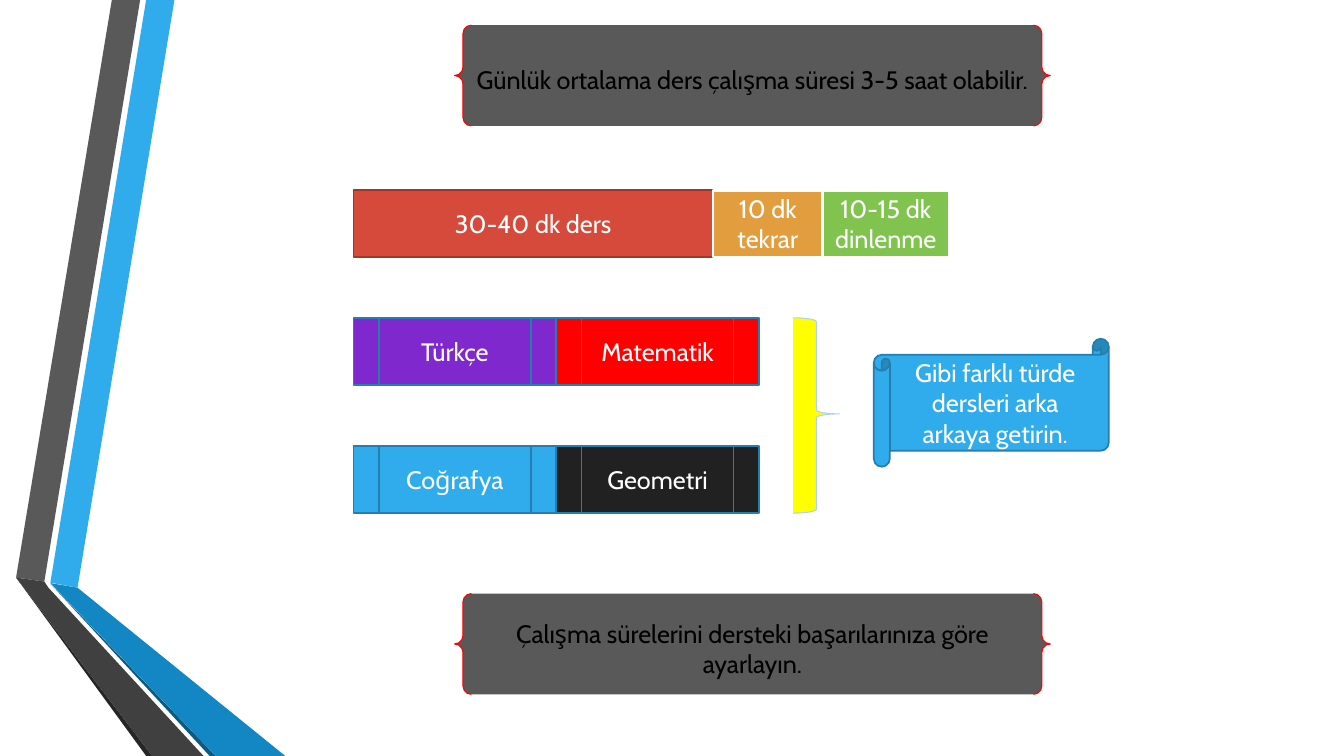
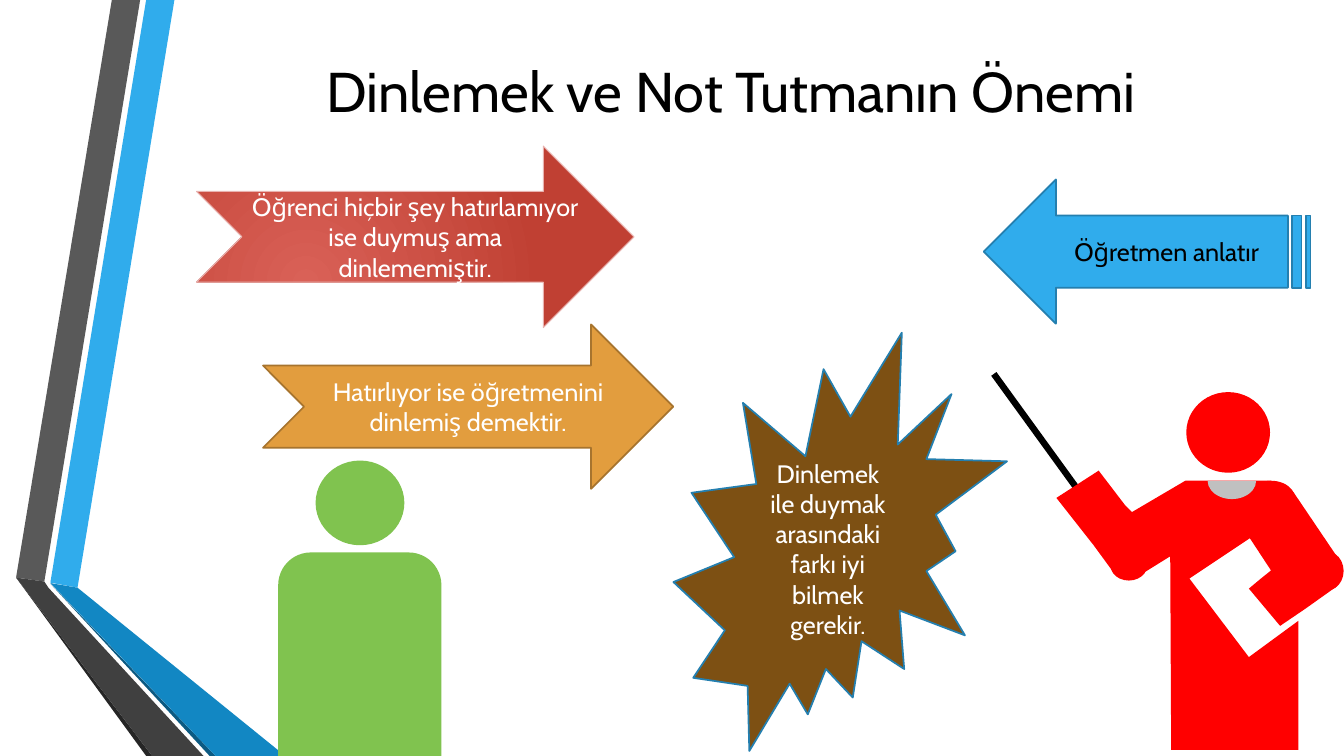
from lxml import etree
from pptx import Presentation
from pptx.dml.color import RGBColor
from pptx.enum.shapes import MSO_CONNECTOR, MSO_SHAPE
from pptx.enum.text import MSO_ANCHOR, PP_ALIGN
from pptx.oxml.ns import qn
from pptx.util import Pt

FONT = "Cabin"
TITLE_ONLY, BLANK = 5, 6
CENTER, LEFT = PP_ALIGN.CENTER, PP_ALIGN.LEFT
MIDDLE, TOP = MSO_ANCHOR.MIDDLE, MSO_ANCHOR.TOP
STRAIGHT = MSO_CONNECTOR.STRAIGHT
RECT, OVAL, CHORD = MSO_SHAPE.RECTANGLE, MSO_SHAPE.OVAL, MSO_SHAPE.CHORD
ROUND_TOP = MSO_SHAPE.ROUND_2_SAME_RECTANGLE
BRACES, RIGHT_BRACE = MSO_SHAPE.DOUBLE_BRACE, MSO_SHAPE.RIGHT_BRACE
PROCESS = MSO_SHAPE.FLOWCHART_PROCESS
PREDEFINED = MSO_SHAPE.FLOWCHART_PREDEFINED_PROCESS
SCROLL, BURST = MSO_SHAPE.HORIZONTAL_SCROLL, MSO_SHAPE.EXPLOSION2
STRIPED, NOTCHED = MSO_SHAPE.STRIPED_RIGHT_ARROW, MSO_SHAPE.NOTCHED_RIGHT_ARROW

COLORS = {
    "black": "000000", "white": "FFFFFF", "ink": "212121", "soot": "262626",
    "charcoal": "404040", "gray": "595959", "silver": "C0C0C0",
    "blue": "30ACEC", "blue_line": "247FAF", "blue_deep": "1287C3",
    "navy": "0C5A82", "pale_blue": "AED2F4", "purple": "7E28CD",
    "red": "FF0000", "brick": "D64A3B", "brick_line": "9E372C",
    "brick_light": "D96157", "brick_dark": "C04033", "pink": "E8B2AF",
    "orange": "E29D3E", "orange_line": "A7742E", "green": "80C34F",
    "yellow": "FFFF00", "brown": "7D5013",
}

BANDS = [
    ("blue", [(36, 416.2), (55.4, 419.8), (124.6, 0), (104.4, 0)]),
    ("gray", [(100.1, 0), (79.9, 0), (11.5, 412.6), (31.7, 415.4)]),
    ("soot", [(11.5, 412.6), (104.4, 540), (108.7, 540)]),
    ("navy", [(36, 416.9), (149.8, 540), (154.1, 540)]),
    ("blue_deep", [(36, 416.5), (154.1, 540), (203.8, 540), (55.4, 419.8)]),
    ("charcoal", [(145.4, 540), (34.6, 419.8), (31.7, 415.4), (11.5, 412.6),
                  (108.7, 540)]),
]

TEACHER_BODY = [
    (896.4, 343.4), (907.9, 343.4), (923.8, 351.4), (955.4, 398.2),
    (954.7, 419), (932.4, 434.9), (914.4, 447.1), (892.1, 420.5),
    (900.7, 413.3), (907.9, 407.5), (892.8, 384.5), (849.6, 413.3),
    (892.1, 469.4), (927.4, 443.5), (927.4, 535.7), (836.6, 535.7),
    (835.9, 397.4), (815, 410.4), (797, 410.4), (794.9, 408.2),
    (781.2, 389.5), (754.6, 355.7), (784.8, 336.2), (803.5, 360.7),
    (808.6, 365.8), (846.7, 343.4),
]


def rgb(name):
    return RGBColor.from_string(COLORS[name])


class Deck:
    def __init__(self):
        self.prs = Presentation()
        self.prs.slide_width, self.prs.slide_height = Pt(960), Pt(540)
        self.s = None

    def slide(self, layout):
        """Start a slide with the folded bands on its left edge."""
        self.s = self.prs.slides.add_slide(self.prs.slide_layouts[layout])
        for color, points in BANDS:
            self.outline(points, color)

    def set_text(self, sp, text, color="white", size=18, align=CENTER, anchor=MIDDLE):
        tf = sp.text_frame
        tf.text, tf.word_wrap, tf.vertical_anchor = text, True, anchor
        p = tf.paragraphs[0]
        p.alignment = align
        font = p.runs[0].font
        font.name, font.size, font.color.rgb = FONT, Pt(size), rgb(color)

    def title(self, text, box):
        sp = self.s.shapes.title
        sp.left, sp.top, sp.width, sp.height = map(Pt, box)
        self.set_text(sp, text, "black", 40)

    def paint(self, sp, fill, line=None, weight=1.25):
        sp.shadow.inherit = False
        sp.fill.solid()
        sp.fill.fore_color.rgb = rgb(fill)
        if line:
            sp.line.color.rgb, sp.line.width = rgb(line), Pt(weight)
        else:
            sp.line.fill.background()

    def outline(self, points, fill):
        points = [(Pt(x), Pt(y)) for x, y in points]
        builder = self.s.shapes.build_freeform(*points[0])
        builder.add_line_segments(points[1:])
        self.paint(builder.convert_to_shape(), fill)

    def shape(self, kind, box, fill, line=None, weight=1.25, text="",
              color="white", adjust=()):
        sp = self.s.shapes.add_shape(kind, *map(Pt, box))
        for i, value in enumerate(adjust):
            sp.adjustments[i] = value
        self.paint(sp, fill, line, weight)
        if text:
            self.set_text(sp, text, color)
        return sp

    def label(self, text, box):
        sp = self.s.shapes.add_textbox(*map(Pt, box))
        self.set_text(sp, text, "black", align=LEFT, anchor=TOP)

    def line(self, start, end, color, weight):
        cx = self.s.shapes.add_connector(STRAIGHT, *map(Pt, start + end))
        cx.line.color.rgb, cx.line.width = rgb(color), Pt(weight)
        etree.SubElement(cx._element.spPr, qn("a:effectLst"))

    def glow(self, sp, inner, outer):
        """Fill with a round gradient spreading from the bottom centre."""
        sp.fill.gradient()
        for stop, color in zip(sp.fill.gradient_stops, (inner, outer)):
            stop.color.rgb = rgb(color)
        grad = sp._element.spPr.find(qn("a:gradFill"))
        grad.remove(grad.find(qn("a:lin")))
        circle = etree.SubElement(grad, qn("a:path"), {"path": "circle"})
        etree.SubElement(circle, qn("a:fillToRect"),
                         l="50000", t="100000", r="100000", b="50000")


def study_time(d):
    d.slide(BLANK)
    for top, text in [
        (18, "Günlük ortalama ders çalışma süresi 3-5 saat olabilir."),
        (424, "Çalışma sürelerini dersteki başarılarınıza göre ayarlayın."),
    ]:
        d.shape(BRACES, (324.7, top, 425.5, 72), "gray", "red", 0.75, text, "black")

    left = 252.5
    for kind, width, fill, line, weight, text in [
        (PROCESS, 256.7, "brick", "brick_line", 1.25, "30-40 dk ders"),
        (RECT, 78.5, "orange", "white", 1.75, "10 dk tekrar"),
        (RECT, 90, "green", "white", 1.75, "10-15 dk dinlenme"),
    ]:
        d.shape(kind, (left, 136, width, 47.5), fill, line, weight, text)
        left += width

    lessons = [("Türkçe", "purple"), ("Matematik", "red"),
               ("Coğrafya", "blue"), ("Geometri", "ink")]
    for i, (text, fill) in enumerate(lessons):
        row, col = divmod(i, 2)
        box = (252.5 + col * 144.8, 227 + row * 91.5, 144.8, 48)
        d.shape(PREDEFINED, box, fill, "blue_line", text=text)

    d.shape(RIGHT_BRACE, (566.6, 227, 33.1, 139.5), "yellow", "pale_blue", 0.75,
            adjust=(0.083, 0.492))
    d.shape(SCROLL, (624.2, 242, 167.8, 91.4), "blue", "blue_line",
            text="Gibi farklı türde dersleri arka arkaya getirin.")


def teacher(d):
    d.line((778.3, 361.4), (709.9, 267.1), "black", 4.63)
    d.outline(TEACHER_BODY, "red")
    for box in [
        (793.4, 393.8, 25.9, 20.9),
        (847.4, 280.1, 59.8, 57.6),
        (935.3, 393.8, 24.5, 28.1),
        (890.6, 343.4, 34.6, 26),
    ]:
        d.shape(OVAL, box, "red")
    d.shape(CHORD, (862.6, 330.5, 34.6, 26), "silver", adjust=(0, 108))


def student(d):
    d.shape(OVAL, (225.4, 329, 63.4, 60.5), "green")
    d.shape(ROUND_TOP, (198.7, 394.6, 116.6, 145.4), "green", adjust=(0.2, 0))


def listening(d):
    d.slide(TITLE_ONLY)
    d.title("Dinlemek ve Not Tutmanın Önemi", (127.4, -5, 789.1, 138.2))
    teacher(d)
    student(d)
    arrow = d.shape(STRIPED, (702.7, 128.2, 233.3, 103), "blue", "blue_line")
    arrow.rotation = 180
    d.label("Öğretmen anlatır", (760.3, 165.6, 149.8, 28.8))
    d.shape(NOTCHED, (187.9, 231.8, 293, 117.4), "orange", "orange_line",
            text="Hatırlıyor ise öğretmenini dinlemiş demektir.")
    arrow = d.shape(
        NOTCHED, (140.4, 104.4, 312.5, 129.6), "brick", "pink", 0.75,
        "Öğrenci hiçbir şey hatırlamıyor ise duymuş ama dinlememiştir.")
    d.glow(arrow, "brick_light", "brick_dark")
    d.shape(BURST, (481, 237.6, 238.3, 298.8), "brown", "blue_line",
            text="Dinlemek ile duymak arasındaki farkı iyi bilmek gerekir.")


def main():
    d = Deck()
    study_time(d)
    listening(d)
    d.prs.save("out.pptx")


if __name__ == "__main__":
    main()
